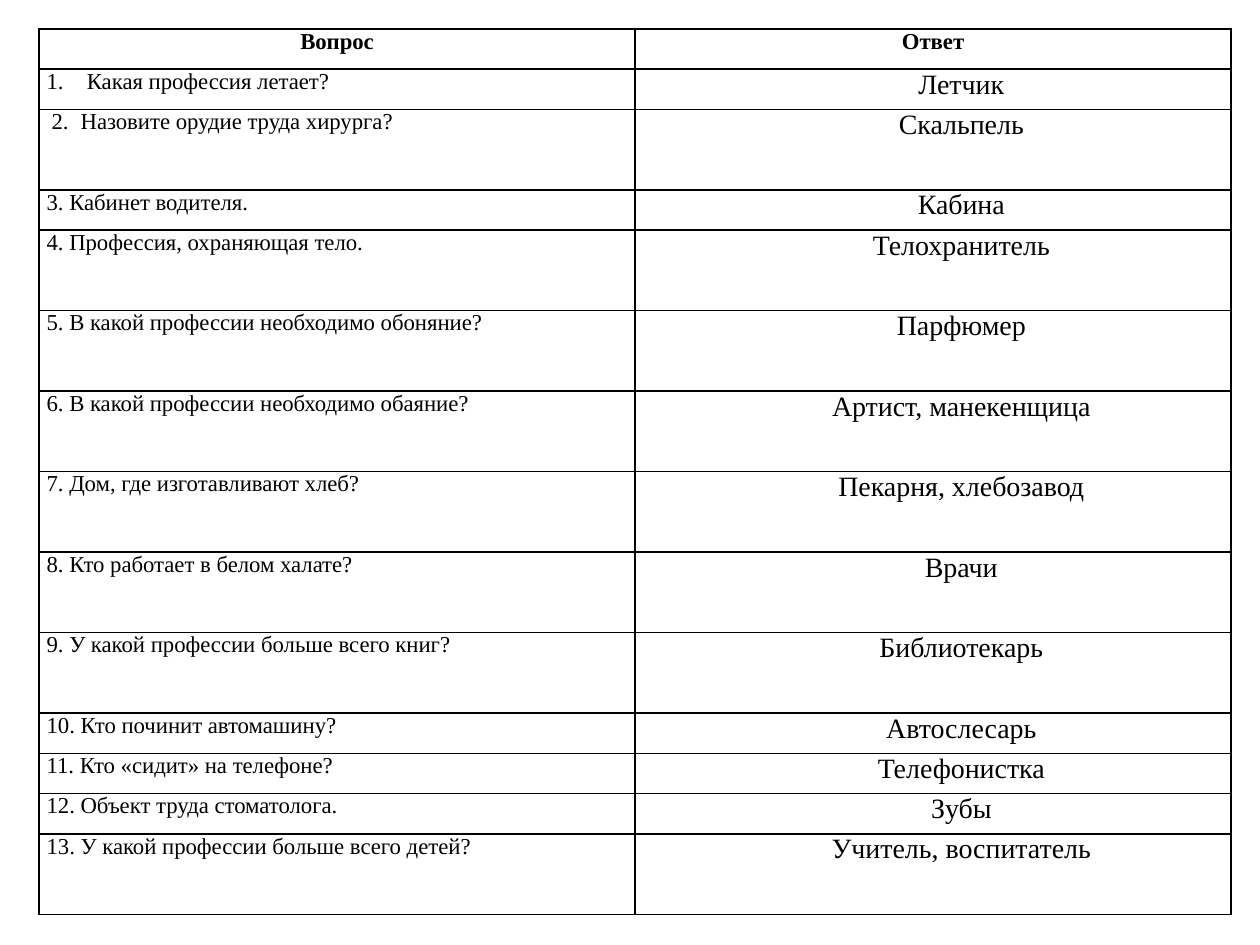
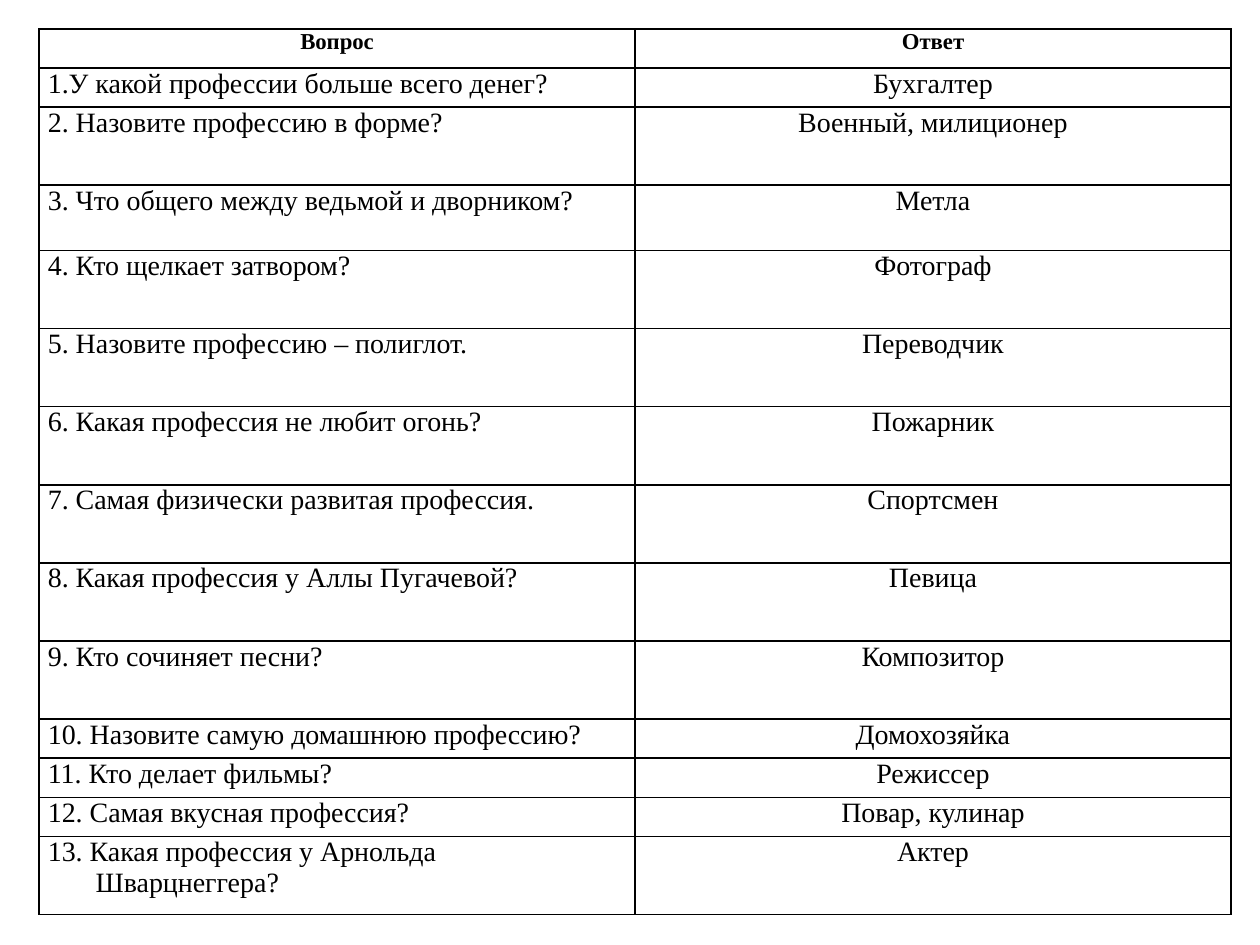
from lxml.etree import SubElement
from pptx import Presentation
from pptx.dml.color import RGBColor
from pptx.enum.text import PP_ALIGN as Align
from pptx.oxml.ns import qn
from pptx.util import Inches, Pt

# Shared look
FONT = "Times New Roman"
INK, PAPER = "000000", "FFFFFF"
TABLE_BOX = (0.31, 0.23, 9.46, 7.03)
HANGING = (0.38, -0.38)
HEADINGS = ("Вопрос", "Ответ")
HEADING = dict(size=13, bold=True, align=Align.CENTER, inset=0.06)

# Each row: question, answer, height in row units
FIRST_ROUND = [
    ("1.\tКакая профессия летает?", "Летчик", 1),
    ("2.\tНазовите орудие труда хирурга?", "Скальпель", 2),
    ("3. Кабинет водителя.", "Кабина", 1),
    ("4. Профессия, охраняющая тело.", "Телохранитель", 2),
    ("5. В какой профессии необходимо обоняние?", "Парфюмер", 2),
    ("6. В какой профессии необходимо обаяние?", "Артист, манекенщица", 2),
    ("7. Дом, где изготавливают хлеб?", "Пекарня, хлебозавод", 2),
    ("8. Кто работает в белом халате?", "Врачи", 2),
    ("9. У какой профессии больше всего книг?", "Библиотекарь", 2),
    ("10. Кто починит автомашину?", "Автослесарь", 1),
    ("11. Кто «сидит» на телефоне?", "Телефонистка", 1),
    ("12. Объект труда стоматолога.", "Зубы", 1),
    ("13. У какой профессии больше всего детей?", "Учитель, воспитатель", 2),
]
SECOND_ROUND = [
    ("1.У какой профессии больше всего денег?", "Бухгалтер", 1),
    ("2. Назовите профессию в форме?", "Военный, милиционер", 2),
    ("3. Что общего между ведьмой и дворником?", "Метла", 1.67),
    ("4. Кто щелкает затвором?", "Фотограф", 2),
    ("5. Назовите профессию – полиглот.", "Переводчик", 2),
    ("6. Какая профессия не любит огонь?", "Пожарник", 2),
    ("7. Самая физически развитая профессия.", "Спортсмен", 2),
    ("8. Какая профессия у Аллы Пугачевой?", "Певица", 2),
    ("9. Кто сочиняет песни?", "Композитор", 2),
    ("10. Назовите самую домашнюю профессию?", "Домохозяйка", 1),
    ("11. Кто делает фильмы?", "Режиссер", 1),
    ("12. Самая вкусная профессия?", "Повар, кулинар", 1),
    ("13. Какая профессия у Арнольда Шварцнеггера?", "Актер", 2),
]


def color(value):
    return RGBColor.from_string(value)


def draw_borders(cell):
    properties = cell._tc.get_or_add_tcPr()
    for position, side in enumerate(("lnL", "lnR", "lnT", "lnB")):
        border = SubElement(properties, qn(f"a:{side}"), w=str(Pt(1)))
        fill = SubElement(border, qn("a:solidFill"))
        SubElement(fill, qn("a:srgbClr"), val=INK)
        properties.insert(position, border)  # borders precede the fill


def write_cell(cell, text, size, inset, align=Align.LEFT, indent=(0, 0), bold=False):
    margins = dict(margin_left=inset, margin_right=inset, margin_top=0, margin_bottom=0)
    for name, value in margins.items():
        setattr(cell, name, Inches(value))
    cell.fill.solid()
    cell.fill.fore_color.rgb = color(PAPER)
    draw_borders(cell)

    paragraph = cell.text_frame.paragraphs[0]
    paragraph.alignment = align
    left, first_line = indent
    if left:
        layout = paragraph._p.get_or_add_pPr()
        layout.set("marL", str(Inches(left)))
        layout.set("indent", str(Inches(first_line)))
    run = paragraph.add_run()
    run.text = text
    for name, value in dict(name=FONT, size=Pt(size), bold=bold).items():
        setattr(run.font, name, value)
    run.font.color.rgb = color(INK)


def add_quiz(slide, box, rounds, question_format, answer_format, indents=None):
    left, top, width, height = map(Inches, box)
    quiz = slide.shapes.add_table(len(rounds) + 1, 2, left, top, width, height).table
    quiz.first_row = quiz.horz_banding = False
    for column in quiz.columns:
        column.width = width // 2

    # Row heights share the box in proportion to their units
    units = [1] + [row_units for _, _, row_units in rounds]
    for row, row_units in zip(quiz.rows, units):
        row.height = int(height * row_units / sum(units))

    for column, heading in enumerate(HEADINGS):
        write_cell(quiz.cell(0, column), heading, **HEADING)
    for number, (question, answer, _) in enumerate(rounds, 1):
        indent = (indents or {}).get(number, HANGING)
        write_cell(quiz.cell(number, 0), question, indent=indent, **question_format)
        write_cell(quiz.cell(number, 1), answer, align=Align.CENTER, **answer_format)


def main():
    deck = Presentation()
    deck.slide_width, deck.slide_height = Inches(10), Inches(7.5)
    blank = deck.slide_layouts[6]
    large = dict(size=16, inset=0.07)

    # The first two questions set their text apart from the number
    add_quiz(deck.slides.add_slide(blank), TABLE_BOX, FIRST_ROUND,
             dict(size=13, inset=0.06), dict(large, indent=(0.45, 0)),
             {1: (0.32, -0.32), 2: (0.27, -0.23)})
    add_quiz(deck.slides.add_slide(blank), TABLE_BOX, SECOND_ROUND, large, large)
    deck.save("out.pptx")


if __name__ == "__main__":
    main()
